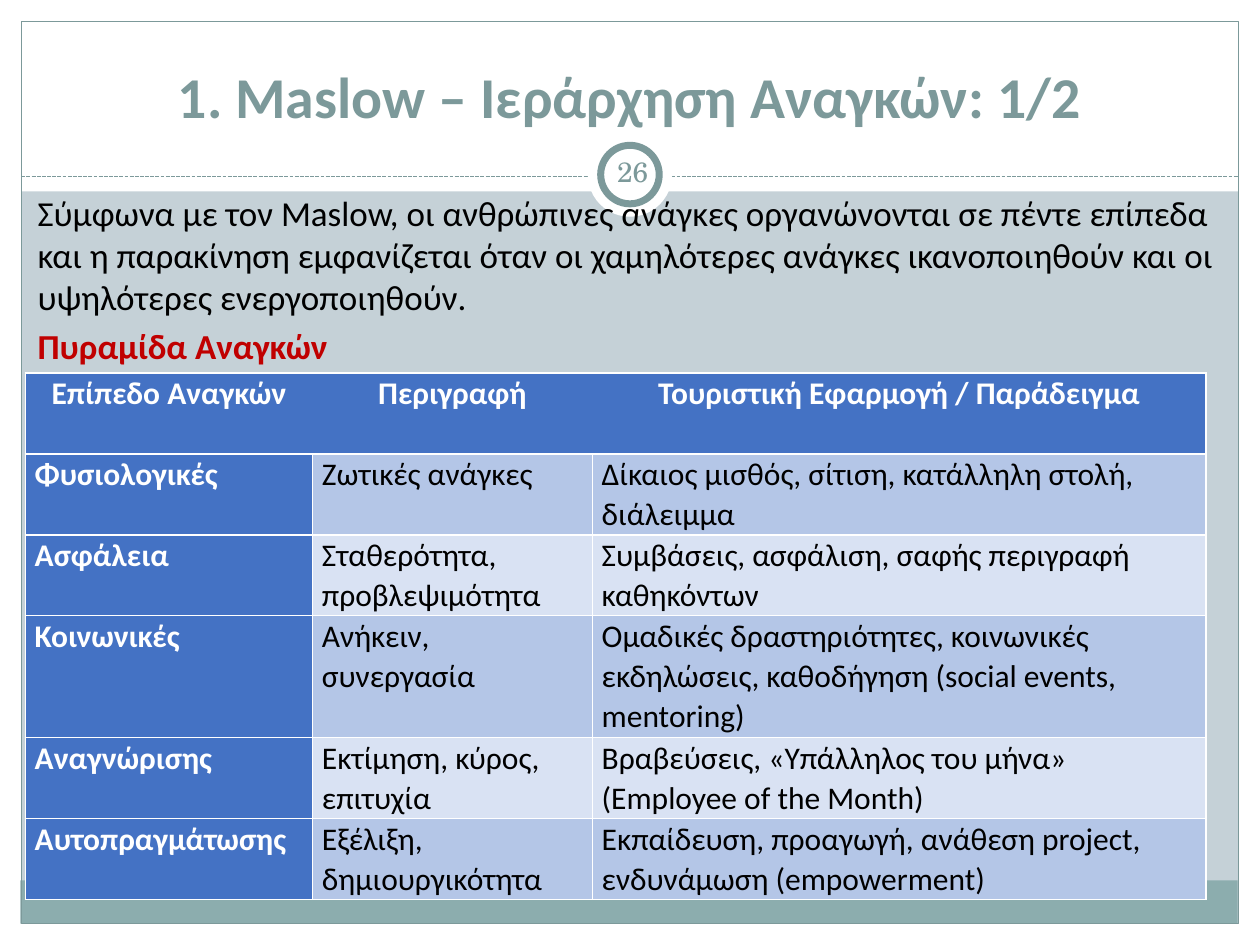
from dataclasses import dataclass
from typing import Optional

from lxml.etree import SubElement
from pptx import Presentation
from pptx.dml.color import RGBColor
from pptx.enum.dml import MSO_LINE
from pptx.enum.shapes import MSO_CONNECTOR, MSO_SHAPE
from pptx.enum.text import MSO_ANCHOR, MSO_AUTO_SIZE, PP_ALIGN
from pptx.oxml.ns import qn
from pptx.util import Cm, Pt

COLORS = {
    "background": "C5D1D7",
    "white": "FFFFFF",
    "black": "000000",
    "teal": "7C999A",
    "footer": "8CADAE",
    "red": "C00000",
    "header": "4472C4",
    "odd": "B4C6E7",
    "even": "D9E2F3",
}
WIDTH, HEIGHT, MARGIN = 25.4, 19.05, 0.43


@dataclass
class Panel:
    left: float
    top: float
    width: float
    height: float
    fill: Optional[str] = "white"
    line: Optional[str] = None
    weight: float = 0.75
    kind: MSO_SHAPE = MSO_SHAPE.RECTANGLE


PANELS = [
    Panel(0, HEIGHT - MARGIN, WIDTH, MARGIN),
    Panel(0, 0, WIDTH, 3.86),
    Panel(0, 0, MARGIN, HEIGHT),
    Panel(WIDTH - MARGIN, 0, MARGIN, HEIGHT),
    Panel(0.41, 17.75, 24.54, 0.87, "footer"),
    Panel(MARGIN, MARGIN, WIDTH - 2 * MARGIN, HEIGHT - 2 * MARGIN, None, "teal"),
]
BADGE = [
    Panel(11.85, 2.67, 1.7, 1.7, kind=MSO_SHAPE.OVAL),
    Panel(12.11, 2.93, 1.18, 1.18, line="teal", weight=4, kind=MSO_SHAPE.OVAL),
]

INTRO = (
    "Σύμφωνα με τον Maslow, οι ανθρώπινες ανάγκες οργανώνονται σε πέντε επίπεδα "
    "και η παρακίνηση εμφανίζεται όταν οι χαμηλότερες ανάγκες ικανοποιηθούν και οι "
    "υψηλότερες ενεργοποιηθούν."
)
NEEDS = [
    ("Επίπεδο Αναγκών", "Περιγραφή", "Τουριστική Εφαρμογή / Παράδειγμα"),
    ("Φυσιολογικές", "Ζωτικές ανάγκες", "Δίκαιος μισθός, σίτιση, κατάλληλη στολή, διάλειμμα"),
    ("Ασφάλεια", "Σταθερότητα, προβλεψιμότητα", "Συμβάσεις, ασφάλιση, σαφής περιγραφή καθηκόντων"),
    ("Κοινωνικές", "Ανήκειν, συνεργασία",
     "Ομαδικές δραστηριότητες, κοινωνικές εκδηλώσεις, καθοδήγηση (social events, mentoring)"),
    ("Αναγνώρισης", "Εκτίμηση, κύρος, επιτυχία",
     "Βραβεύσεις, «Υπάλληλος του μήνα» (Employee of the Month)"),
    ("Αυτοπραγμάτωσης", "Εξέλιξη, δημιουργικότητα",
     "Εκπαίδευση, προαγωγή, ανάθεση project, ενδυνάμωση (empowerment)"),
]
COLUMN_WIDTHS = (5.79, 5.64, 12.37)
ROW_HEIGHTS = (1.63, 1.63, 1.63, 2.46, 1.63, 1.63)


def rgb(name: str) -> RGBColor:
    return RGBColor.from_string(COLORS[name])


def write(paragraph, text: str, *, size: float, color: str = "black", font: str = "Calibri",
          bold: bool = False, align=PP_ALIGN.LEFT, before: float = 0, spacing: float = 1.0) -> None:
    paragraph.alignment = align
    paragraph.space_before = Pt(before)
    paragraph.line_spacing = spacing
    run = paragraph.add_run()
    run.text = text
    run.font.name, run.font.size, run.font.bold = font, Pt(size), bold
    run.font.color.rgb = rgb(color)


def draw_panel(slide, panel: Panel) -> None:
    shape = slide.shapes.add_shape(
        panel.kind, Cm(panel.left), Cm(panel.top), Cm(panel.width), Cm(panel.height))
    shape.shadow.inherit = False
    if panel.fill:
        shape.fill.solid()
        shape.fill.fore_color.rgb = rgb(panel.fill)
    else:
        shape.fill.background()
    if panel.line:
        shape.line.color.rgb = rgb(panel.line)
        shape.line.width = Pt(panel.weight)
    else:
        shape.line.fill.background()


def draw_divider(slide, top: float) -> None:
    line = slide.shapes.add_connector(
        MSO_CONNECTOR.STRAIGHT, Cm(MARGIN), Cm(top), Cm(WIDTH - MARGIN), Cm(top))
    line.line.color.rgb = rgb("teal")
    line.line.width = Pt(0.75)
    line.line.dash_style = MSO_LINE.SQUARE_DOT
    SubElement(line.element.spPr, qn("a:effectLst"))


def add_text_frame(slide, left: float, top: float, width: float, height: float):
    frame = slide.shapes.add_textbox(Cm(left), Cm(top), Cm(width), Cm(height)).text_frame
    frame.word_wrap = True
    return frame


def set_borders(cell, sides: str) -> None:
    properties = cell._tc.get_or_add_tcPr()
    for side in "LRTB":
        border = SubElement(properties, qn(f"a:ln{side}"), w=str(Pt(1)))
        if side in sides:
            fill = SubElement(border, qn("a:solidFill"))
            SubElement(fill, qn("a:srgbClr"), val=COLORS["white"])
        else:
            SubElement(border, qn("a:noFill"))


def draw_table(slide, left: float, top: float) -> None:
    table = slide.shapes.add_table(
        len(NEEDS), len(COLUMN_WIDTHS), Cm(left), Cm(top),
        Cm(sum(COLUMN_WIDTHS)), Cm(sum(ROW_HEIGHTS))).table
    for column, width in zip(table.columns, COLUMN_WIDTHS):
        column.width = Cm(width)
    for row, height in zip(table.rows, ROW_HEIGHTS):
        row.height = Cm(height)
    last = len(COLUMN_WIDTHS) - 1
    for i, texts in enumerate(NEEDS):
        for j, text in enumerate(texts):
            cell = table.cell(i, j)
            heading = i == 0 or j == 0
            cell.margin_left = cell.margin_right = Cm(0.19)
            cell.margin_top = cell.margin_bottom = 0
            # The header row has no inner vertical borders
            sides = "LRTB" if i else "TB" + "L" * (j == 0) + "R" * (j == last)
            set_borders(cell, sides)
            cell.fill.solid()
            cell.fill.fore_color.rgb = rgb("header" if heading else "odd" if i % 2 else "even")
            write(cell.text_frame.paragraphs[0], text, size=18, bold=heading, spacing=1.04,
                  color="white" if heading else "black",
                  align=PP_ALIGN.LEFT if i else PP_ALIGN.CENTER)


def main() -> None:
    presentation = Presentation()
    presentation.slide_width, presentation.slide_height = Cm(WIDTH), Cm(HEIGHT)
    slide = presentation.slides.add_slide(presentation.slide_layouts[5])
    slide.background.fill.solid()
    slide.background.fill.fore_color.rgb = rgb("background")

    # Frame and divider with its number badge
    for panel in PANELS:
        draw_panel(slide, panel)
    draw_divider(slide, 3.56)
    for panel in BADGE:
        draw_panel(slide, panel)

    # Title, brought in front of the frame
    title = slide.shapes.title
    title.left, title.top, title.width, title.height = Cm(0.84), Cm(0.64), Cm(23.7), Cm(2.11)
    title.text_frame.auto_size = MSO_AUTO_SIZE.NONE
    title.text_frame.vertical_anchor = MSO_ANCHOR.BOTTOM
    write(title.text_frame.paragraphs[0], "1. Maslow – Ιεράρχηση Αναγκών: 1/2",
          size=33, color="teal", bold=True, align=PP_ALIGN.CENTER)
    title.element.getparent().append(title.element)

    # Introduction
    body = add_text_frame(slide, 0.51, 3.73, 24.61, 3.61)
    write(body.paragraphs[0], INTRO, size=20, before=4)
    write(body.add_paragraph(), "Πυραμίδα Αναγκών", size=20, color="red", bold=True, before=4)

    # Slide number
    number = add_text_frame(slide, 12.12, 2.84, 1.27, 1.22)
    number.margin_left = number.margin_right = number.margin_top = number.margin_bottom = Cm(0.13)
    number.vertical_anchor = MSO_ANCHOR.MIDDLE
    write(number.paragraphs[0], "26", size=16, color="teal", font="TeX Gyre Schola",
          align=PP_ALIGN.CENTER)

    # Hierarchy of needs
    draw_table(slide, 0.51, 7.52)
    presentation.save("out.pptx")


if __name__ == "__main__":
    main()
